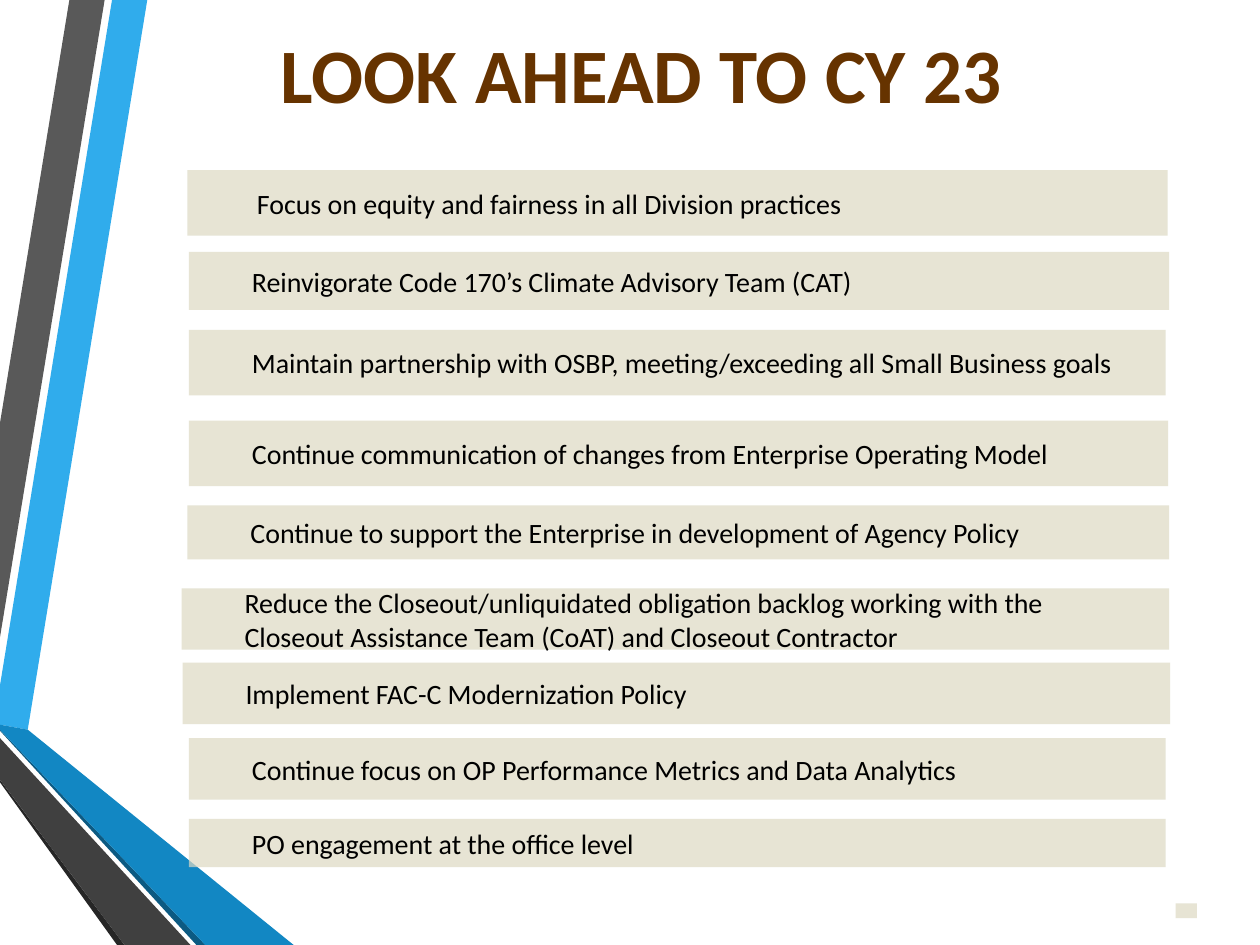
from typing import NamedTuple

from lxml.etree import SubElement
from pptx import Presentation
from pptx.dml.color import RGBColor
from pptx.enum.shapes import MSO_SHAPE
from pptx.enum.text import MSO_ANCHOR, PP_ALIGN
from pptx.oxml.ns import qn
from pptx.shapes.autoshape import Shape
from pptx.slide import Slide
from pptx.text.text import TextFrame
from pptx.util import Cm, Pt

COLORS: dict[str, str] = {
    "sky": "30ACEC",
    "blue": "1287C3",
    "deep_blue": "0C5A82",
    "grey": "595959",
    "dark_grey": "404040",
    "charcoal": "262626",
    "sand": "DDD9C3",
    "brown": "663300",
    "black": "000000",
}
FONT = "Calibri"
SAND_OPACITY = 70


class Ribbon(NamedTuple):
    color: str
    points: list[tuple[float, float]]


class Bar(NamedTuple):
    left: float
    top: float
    width: float
    height: float
    lines: list[str]
    indent: float = 1.27


RIBBONS = [
    Ribbon("sky", [(0, 13.82), (0, 14.61), (0.56, 14.71), (2.97, 0), (2.26, 0)]),
    Ribbon("grey", [(2.11, 0), (1.4, 0), (0, 8.53), (0, 12.85)]),
    Ribbon("charcoal", [(0, 15.72), (0, 15.77), (2.36, 19.05), (2.51, 19.05)]),
    Ribbon("deep_blue", [(0, 14.71), (0, 14.73), (3.96, 19.05), (4.14, 19.05)]),
    Ribbon("blue", [(0, 14.71), (4.14, 19.05), (5.92, 19.05), (0.56, 14.71), (0, 14.61)]),
    Ribbon("dark_grey", [(0, 15.72), (2.51, 19.05), (3.84, 19.05), (0, 14.88)]),
]

BARS = [
    Bar(3.78, 3.43, 19.76, 1.32, ["Focus on equity and fairness in all Division practices"], 1.4),
    Bar(3.81, 5.08, 19.76, 1.17, ["Reinvigorate Code 170’s Climate Advisory Team (CAT)"]),
    Bar(3.81, 6.65, 19.69, 1.32,
        ["Maintain partnership with OSBP, meeting/exceeding all Small Business goals"]),
    Bar(3.81, 8.48, 19.74, 1.32,
        ["Continue communication of changes from Enterprise Operating Model"]),
    Bar(3.78, 10.19, 19.79, 1.09,
        ["Continue to support the Enterprise in development of Agency Policy"]),
    Bar(3.66, 11.86, 19.91, 1.24,
        ["Reduce the Closeout/unliquidated obligation backlog working with the",
         "Closeout Assistance Team (CoAT) and Closeout Contractor"]),
    Bar(3.68, 13.36, 19.91, 1.24, ["Implement FAC-C Modernization Policy"]),
    Bar(3.81, 14.88, 19.69, 1.24,
        ["Continue focus on OP Performance Metrics and Data Analytics"]),
    Bar(3.81, 16.51, 19.69, 0.97, ["PO engagement at the office level"]),
    Bar(23.7, 18.21, 0.43, 0.3, []),
]


def paint(shape: Shape, color: str) -> None:
    """Give a shape a flat fill without outline or shadow."""
    shape.shadow.inherit = False
    shape.fill.solid()
    shape.fill.fore_color.rgb = RGBColor.from_string(COLORS[color])
    shape.line.fill.background()


def write(frame: TextFrame, lines: list[str], size: int, color: str,
          alignment: PP_ALIGN, space_after: int, bold: bool = False,
          indent: float = 0) -> None:
    """Write the lines as one vertically centred paragraph."""
    frame.word_wrap = True
    frame.vertical_anchor = MSO_ANCHOR.MIDDLE
    frame.margin_left = Cm(indent)
    frame.margin_top = frame.margin_right = frame.margin_bottom = 0
    paragraph = frame.paragraphs[0]
    paragraph.alignment = alignment
    paragraph.space_after = Pt(space_after)
    for index, line in enumerate(lines):
        if index:
            paragraph.add_line_break()
        run = paragraph.add_run()
        run.text = line
        run.font.name = FONT
        run.font.size = Pt(size)
        run.font.bold = bold
        run.font.color.rgb = RGBColor.from_string(COLORS[color])


def draw_ribbon(slide: Slide, ribbon: Ribbon) -> None:
    """Draw one closed band of the left decoration."""
    start, *rest = [(Cm(x), Cm(y)) for x, y in ribbon.points]
    builder = slide.shapes.build_freeform(*start)
    builder.add_line_segments(rest, close=True)
    paint(builder.convert_to_shape(), ribbon.color)


def draw_bar(slide: Slide, bar: Bar) -> None:
    """Draw one translucent bar with its goal."""
    shape = slide.shapes.add_shape(
        MSO_SHAPE.RECTANGLE, Cm(bar.left), Cm(bar.top), Cm(bar.width), Cm(bar.height))
    paint(shape, "sand")
    color = shape.fill._xPr.find(qn("a:solidFill")).find(qn("a:srgbClr"))
    SubElement(color, qn("a:alpha")).set("val", str(SAND_OPACITY * 1000))
    if bar.lines:
        write(shape.text_frame, bar.lines, 16, "black", PP_ALIGN.LEFT, 6, indent=bar.indent)


def draw_title(slide: Slide, title: str) -> None:
    """Draw the centred slide title."""
    box = slide.shapes.add_textbox(Cm(0.46), Cm(0.2), Cm(24.94), Cm(2.54))
    write(box.text_frame, [title], 44, "brown", PP_ALIGN.CENTER, 18, bold=True)


def main() -> None:
    """Build and save the presentation."""
    presentation = Presentation()
    presentation.slide_width = Cm(25.4)
    presentation.slide_height = Cm(19.05)
    slide = presentation.slides.add_slide(presentation.slide_layouts[6])
    for ribbon in RIBBONS:
        draw_ribbon(slide, ribbon)
    draw_title(slide, "LOOK AHEAD TO CY 23")
    for bar in BARS:
        draw_bar(slide, bar)
    presentation.save("out.pptx")


if __name__ == "__main__":
    main()
